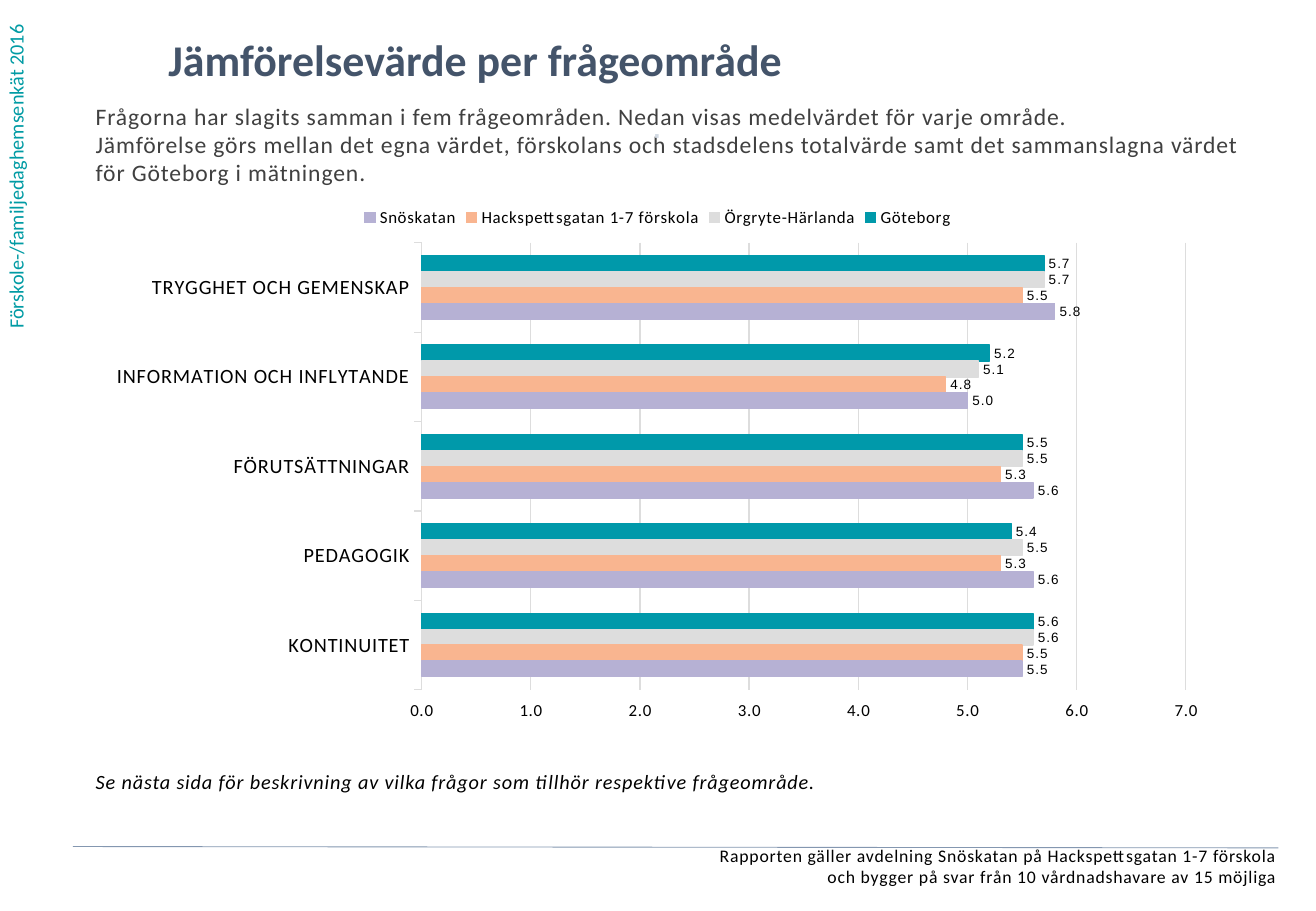
from lxml import etree
from pptx import Presentation
from pptx.chart.data import CategoryChartData
from pptx.dml.color import RGBColor
from pptx.enum.chart import (XL_CHART_TYPE, XL_LABEL_POSITION, XL_LEGEND_POSITION,
                             XL_TICK_LABEL_POSITION, XL_TICK_MARK)
from pptx.enum.shapes import MSO_CONNECTOR
from pptx.enum.text import MSO_ANCHOR, PP_ALIGN
from pptx.oxml.ns import qn
from pptx.util import Pt

LEFT, CENTER, RIGHT = PP_ALIGN.LEFT, PP_ALIGN.CENTER, PP_ALIGN.RIGHT
TOP = MSO_ANCHOR.TOP
BAR = XL_CHART_TYPE.BAR_CLUSTERED
OUTSIDE = XL_TICK_MARK.OUTSIDE
NO_TICKS = XL_TICK_MARK.NONE
OUTSIDE_END = XL_LABEL_POSITION.OUTSIDE_END
LEGEND_TOP = XL_LEGEND_POSITION.TOP
HIGH = XL_TICK_LABEL_POSITION.HIGH
STRAIGHT = MSO_CONNECTOR.STRAIGHT

FONT, LABEL_FONT = "Calibri", "Arial"
BLACK, GRID = "000000", "DDDDDD"
NUMBER_FORMAT = "0.0;0.0"
SPACING = "50"

TITLE = "Jämförelsevärde per frågeområde"
SIDEBAR = "Förskole-/familjedaghemsenkät 2016"
INTRO = [
    "Frågorna har slagits samman i fem frågeområden. Nedan visas medelvärdet för varje område.",
    "Jämförelse görs mellan det egna värdet, förskolans och stadsdelens totalvärde samt "
    "det sammanslagna värdet för Göteborg i mätningen.",
]
NOTE = "Se nästa sida för beskrivning av vilka frågor som tillhör respektive frågeområde."
FOOTER = [
    "Rapporten gäller avdelning Snöskatan på Hackspettsgatan 1-7 förskola",
    "och bygger på svar från 10 vårdnadshavare av 15 möjliga",
]
AREAS = ["TRYGGHET OCH GEMENSKAP", "INFORMATION OCH INFLYTANDE",
         "FÖRUTSÄTTNINGAR", "PEDAGOGIK", "KONTINUITET"]
SERIES = [
    ("Göteborg", "0099AA", (5.7, 5.2, 5.5, 5.4, 5.6)),
    ("Örgryte-Härlanda", "DDDDDD", (5.7, 5.1, 5.5, 5.5, 5.6)),
    ("Hackspettsgatan 1-7 förskola", "F9B590", (5.5, 4.8, 5.3, 5.3, 5.5)),
    ("Snöskatan", "B6B1D4", (5.8, 5.0, 5.6, 5.6, 5.5)),
]
PLOT = {"x": 0.29, "y": 0.09, "w": 0.68, "h": 0.83}


def rgb(color):
    return RGBColor.from_string(color)


def box(*place):
    return [Pt(v) for v in place]


def set_font(font, size, color=BLACK, name=FONT):
    font.name, font.size = name, Pt(size)
    font.color.rgb = rgb(color)


def set_line(line, color, width):
    line.color.rgb = rgb(color)
    line.width = Pt(width)


def fill_text(tf, lines, size, color, align=LEFT, bold=False, italic=False,
              spaced=True, insets=(0, 0)):
    tf.word_wrap = True
    tf.vertical_anchor = TOP
    tf.margin_left = tf.margin_right = Pt(insets[0])
    tf.margin_top = tf.margin_bottom = Pt(insets[1])
    for i, line in enumerate(lines):
        p = tf.add_paragraph() if i else tf.paragraphs[0]
        r = p.add_run()
        r.text = line
        if spaced:
            r._r.get_or_add_rPr().set("spc", SPACING)
        p.alignment = align
        set_font(p.font, size, color)
        p.font.bold, p.font.italic = bold, italic


def add_text(slide, place, lines, size, color, **style):
    s = slide.shapes.add_textbox(*box(*place))
    fill_text(s.text_frame, lines, size, color, **style)
    return s


def add_area_chart(slide, place):
    data = CategoryChartData(number_format="0.0")
    data.categories = AREAS
    for name, _, values in SERIES:
        data.add_series(name, values)
    chart = slide.shapes.add_chart(BAR, *box(*place), data).chart
    chart.has_title = False
    set_font(chart.font, 10)

    chart.has_legend = True
    chart.legend.position = LEGEND_TOP
    chart.legend.include_in_layout = False
    set_font(chart.legend.font, 10)

    cat = chart.category_axis
    cat.reverse_order = True
    cat.major_tick_mark = OUTSIDE
    set_font(cat.tick_labels.font, 12)
    set_line(cat.format.line, GRID, 0.75)

    val = chart.value_axis
    val.minimum_scale, val.maximum_scale, val.major_unit = 0, 7, 1
    val.major_tick_mark = NO_TICKS
    val.tick_label_position = HIGH
    val.format.line.fill.background()
    val.has_major_gridlines = True
    set_line(val.major_gridlines.format.line, GRID, 0.75)
    val.tick_labels.number_format = NUMBER_FORMAT
    val.tick_labels.number_format_is_linked = False
    set_font(val.tick_labels.font, 10)

    plot = chart.plots[0]
    plot.vary_by_categories = False
    plot.gap_width, plot.overlap = 162, 0
    for series, (_, color, _) in zip(plot.series, SERIES):
        series.format.fill.solid()
        series.format.fill.fore_color.rgb = rgb(color)
        set_line(series.format.line, color, 0.75)
        labels = series.data_labels
        labels.show_value = True
        labels.position = OUTSIDE_END
        labels.number_format = NUMBER_FORMAT
        labels.number_format_is_linked = False
        set_font(labels.font, 8, name=LABEL_FONT)

    root = chart._chartSpace
    for props in root.iter(qn("a:defRPr")):
        props.set("spc", SPACING)
    area = root.find(".//" + qn("c:plotArea"))
    layout = area.find(qn("c:layout"))
    if layout is None:
        layout = etree.Element(qn("c:layout"))
        area.insert(0, layout)
    manual = etree.SubElement(layout, qn("c:manualLayout"))
    settings = [("layoutTarget", "inner"), ("xMode", "edge"), ("yMode", "edge")]
    for tag, value in settings + list(PLOT.items()):
        etree.SubElement(manual, qn("c:" + tag)).set("val", str(value))


def main():
    prs = Presentation()
    prs.slide_width, prs.slide_height = Pt(779.76), Pt(540)
    slide = prs.slides.add_slide(prs.slide_layouts[5])

    title = slide.shapes.title
    title.left, title.top, title.width, title.height = box(99.8, 19.5, 600, 41)
    fill_text(title.text_frame, [TITLE], 26, "44546A", bold=True, spaced=False)

    sidebar = add_text(slide, (-1.44, 0, 28.8, 202), [SIDEBAR], 12, "009BA4",
                       spaced=False, insets=(7.2, 3.6))
    sidebar.text_frame._txBody.bodyPr.set("vert", "vert270")

    add_text(slide, (56.7, 60.2, 690, 73), INTRO, 14, "404040")
    add_text(slide, (278.4, 73.4, 221.8, 28), ["⋅"], 12, "D2D9E2",
             align=CENTER, bold=True)
    add_area_chart(slide, (56.7, 115.2, 666, 319.3))
    add_text(slide, (56.7, 456, 666, 20), [NOTE], 12, BLACK, italic=True)
    add_text(slide, (8.6, 500.7, 748, 31), FOOTER, 10.5, BLACK, align=RIGHT)

    rule = slide.shapes.add_connector(STRAIGHT, *box(43.2, 501.8, 757.4, 502.6))
    set_line(rule.line, "8497B0", 0.5)
    etree.SubElement(rule._element.spPr, qn("a:effectLst"))

    prs.save("out.pptx")


if __name__ == "__main__":
    main()
